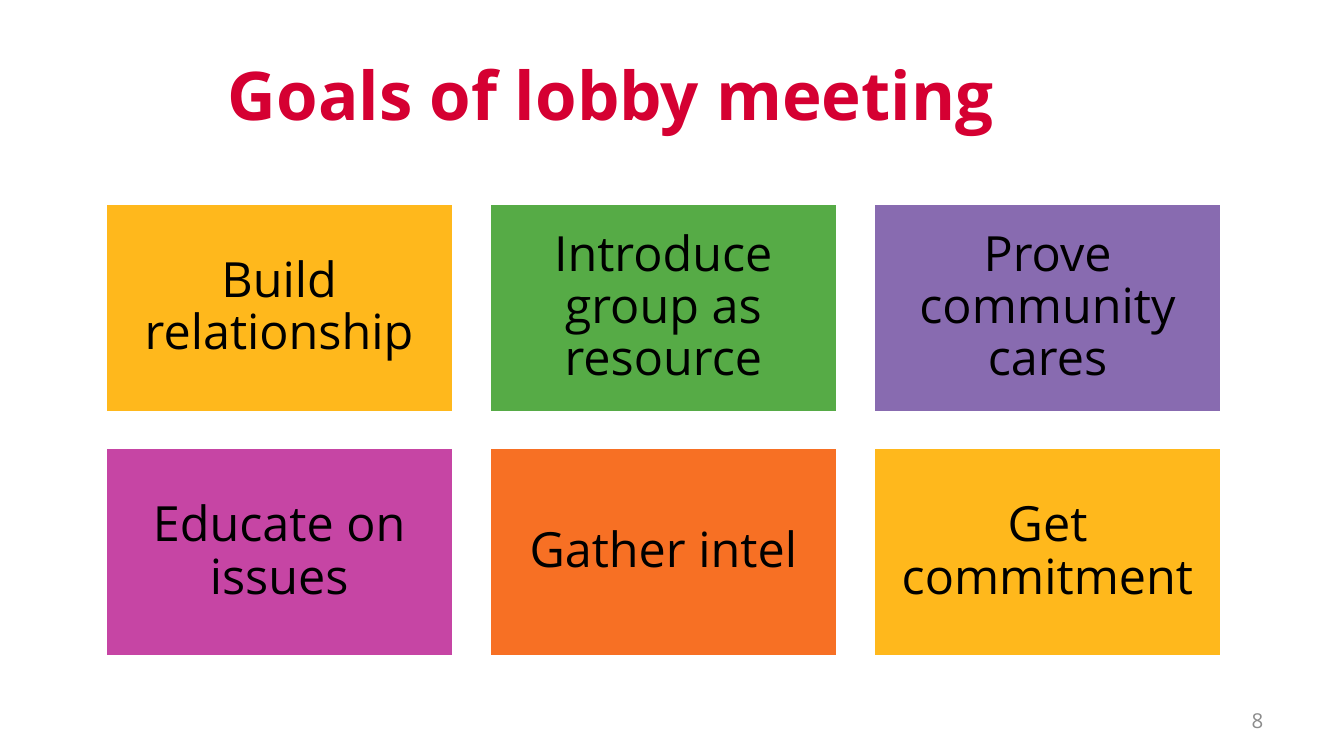
"""Build the slide on the goals of a lobby meeting."""
from pptx import Presentation
from pptx import util as u
from pptx.dml import color
from pptx.enum import shapes, text

FONT = "Open Sans"
TITLE = "Goals of lobby meeting"
PAGE_NUMBER = "8"
GOALS = [
    ("Build relationship", "FFB81C"),
    ("Introduce group as resource", "56AB46"),
    ("Prove community cares", "886BB0"),
    ("Educate on issues", "C645A4"),
    ("Gather intel", "F77024"),
    ("Get commitment", "FFB81C"),
]
COLUMNS = 3
LEFT, TOP = 1.98, 3.84
WIDTH, HEIGHT, GAP = 6.6, 3.96, 0.66


def paint(target, hex_color):
    """Give a fill or line format a solid colour."""
    target.solid()
    target.fore_color.rgb = color.RGBColor.from_string(hex_color)


def write(box, words, size, hex_color, align, bold=False):
    """Put one formatted paragraph in a box, centred vertically."""
    frame = box.text_frame
    frame.text = words
    frame.word_wrap = True
    frame.auto_size = text.MSO_AUTO_SIZE.NONE
    frame.vertical_anchor = text.MSO_ANCHOR.MIDDLE
    para = frame.paragraphs[0]
    para.alignment = align
    span = para.runs[0]
    span.font.name = FONT
    span.font.size = u.Pt(size)
    span.font.bold = bold
    paint(span.font.fill, hex_color)
    return frame


def add_goal(page, index, words, hex_color):
    """Add one coloured goal tile at its place in the grid."""
    row, column = divmod(index, COLUMNS)
    tile = page.shapes.add_shape(
        shapes.MSO_SHAPE.RECTANGLE,
        u.Cm(LEFT + column * (WIDTH + GAP)), u.Cm(TOP + row * (HEIGHT + GAP)),
        u.Cm(WIDTH), u.Cm(HEIGHT))
    tile.shadow.inherit = False
    paint(tile.fill, hex_color)
    paint(tile.line.fill, "FFFFFF")
    tile.line.width = u.Pt(2)
    frame = write(tile, words, 26, "000000", text.PP_ALIGN.CENTER)
    frame.margin_left = frame.margin_right = u.Cm(0.28)
    frame.margin_top = frame.margin_bottom = u.Cm(0.28)
    frame.paragraphs[0].line_spacing = 0.9


def main():
    """Build and save the deck."""
    deck = Presentation()
    deck.slide_width, deck.slide_height = u.Cm(25.4), u.Cm(14.29)
    page = deck.slides.add_slide(deck.slide_layouts.get_by_name("Title Only"))

    title = page.shapes.title
    title.left, title.top = u.Cm(1.27), u.Cm(0.58)
    title.width, title.height = u.Cm(20.55), u.Cm(2.39)
    write(title, TITLE, 36, "D50032", text.PP_ALIGN.CENTER, bold=True)

    for index, (words, hex_color) in enumerate(GOALS):
        add_goal(page, index, words, hex_color)

    number = page.shapes.add_textbox(u.Cm(18.21), u.Cm(13.23), u.Cm(5.92), u.Cm(0.76))
    write(number, PAGE_NUMBER, 11, "8C8C8C", text.PP_ALIGN.RIGHT)
    deck.save("out.pptx")


if __name__ == "__main__":
    main()
